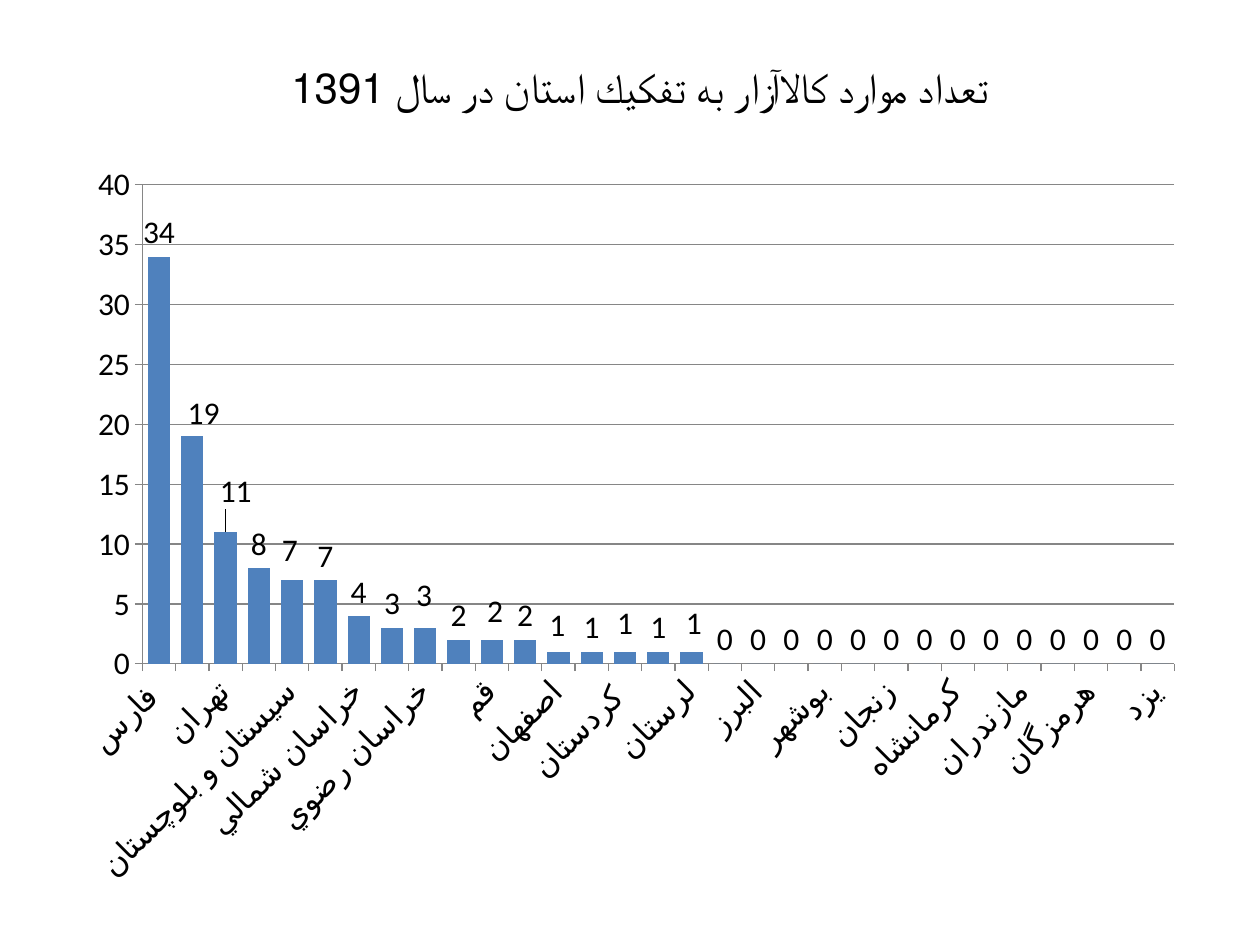
from lxml import etree
from pptx import Presentation
from pptx.chart.data import CategoryChartData
from pptx.dml.color import RGBColor
from pptx.enum.chart import XL_CHART_TYPE, XL_LABEL_POSITION, XL_TICK_MARK
from pptx.enum.text import MSO_ANCHOR, PP_ALIGN
from pptx.oxml.ns import qn
from pptx.util import Inches, Pt

COLORS = {"text": "000000", "bars": "4F81BD", "lines": "868686"}
FONT = "Calibri"

CASES = [
    ("فارس ", 34), ("آذربايجان شرقي ", 19), ("تهران", 11), ("اردبيل", 8),
    ("سيستان و بلوچستان", 7), ("كرمان", 7), ("خراسان شمالي", 4),
    ("چهارمحال و بختياري", 3), ("خراسان رضوي", 3), ("خوزستان", 2), ("قم", 2),
    ("كهگيلوئيه و بوير احمد", 2), ("اصفهان", 1), ("سمنان", 1), ("كردستان ", 1),
    ("گيلان", 1), ("لرستان", 1), ("آذربايجان غربي", 0), ("البرز", 0),
    ("ايلام", 0), ("بوشهر", 0), ("خراسان جنوبي", 0), ("زنجان", 0),
    ("قزوين", 0), ("كرمانشاه", 0), ("گلستان", 0), ("مازندران", 0),
    ("مركزي", 0), ("هرمزگان", 0), ("همدان", 0), ("يزد", 0),
]

# Label shifts by bar, in hundredths of the chart's width and height
LABEL_SHIFTS = {1: (1, 0.2), 2: (0.9, -2.3), 4: (-0.2, -0.8), 8: (-0.1, -1.1),
                10: (0.3, -0.6), 12: (-0.1, -0.3), 14: (0, -0.6), 16: (0.2, -0.6)}


def manual_layout(**settings):
    layout = etree.Element(qn("c:layout"))
    manual = etree.SubElement(layout, qn("c:manualLayout"))
    for tag, value in settings.items():
        etree.SubElement(manual, qn(f"c:{tag}")).set("val", str(value))
    return layout


def style_font(font, size):
    font.name = FONT
    font.size = Pt(size)
    font.bold = False
    font.color.rgb = RGBColor.from_string(COLORS["text"])


prs = Presentation()
prs.slide_width, prs.slide_height = Inches(10), Inches(7.5)
slide = prs.slides.add_slide(prs.slide_layouts[5])

heading = slide.shapes.title
heading.left, heading.top = Inches(0.58), Inches(0.25)
heading.width, heading.height = Inches(9), Inches(0.87)
heading.text_frame.vertical_anchor = MSO_ANCHOR.MIDDLE
heading_line = heading.text_frame.paragraphs[0]
heading_line.alignment = PP_ALIGN.CENTER
heading_line._p.get_or_add_pPr().set("rtl", "1")
heading_run = heading_line.add_run()
heading_run.text = "تعداد موارد كالاآزار به تفكيك استان در سال 1391"
style_font(heading_run.font, 24)

provinces, counts = zip(*CASES)
case_data = CategoryChartData()
case_data.categories = provinces
case_data.add_series("Series 1", counts)
chart = slide.shapes.add_chart(
    XL_CHART_TYPE.COLUMN_CLUSTERED,
    Inches(0.5), Inches(1.17), Inches(9), Inches(5.94), case_data).chart
chart.has_legend = False
chart.has_title = False
style_font(chart.font, 18)

plot_area = chart._chartSpace.chart.plotArea
for automatic in plot_area.findall(qn("c:layout")):
    plot_area.remove(automatic)
plot_area.insert(0, manual_layout(
    layoutTarget="inner", xMode="edge", yMode="edge",
    x=0.07, y=0.05, w=0.91, h=0.64))

plot = chart.plots[0]
plot.gap_width = 49
plot.vary_by_categories = False
bars = plot.series[0]
bars.format.fill.solid()
bars.format.fill.fore_color.rgb = RGBColor.from_string(COLORS["bars"])
bars.data_labels.show_value = True
bars.data_labels.position = XL_LABEL_POSITION.OUTSIDE_END

for bar, (right, down) in LABEL_SHIFTS.items():
    bars.points[bar].data_label.position = XL_LABEL_POSITION.OUTSIDE_END
for label in bars.data_labels._element.findall(qn("c:dLbl")):
    index = label.find(qn("c:idx"))
    right, down = LABEL_SHIFTS[int(index.get("val"))]
    index.addnext(manual_layout(x=right / 100, y=down / 100))

count_axis, province_axis = chart.value_axis, chart.category_axis
count_axis.minimum_scale, count_axis.maximum_scale = 0, 40
count_axis.major_unit = 5
count_axis.has_major_gridlines = True
for line in (count_axis.major_gridlines.format.line,
             count_axis.format.line, province_axis.format.line):
    line.color.rgb = RGBColor.from_string(COLORS["lines"])
    line.width = Pt(0.75)
for axis in (count_axis, province_axis):
    axis.major_tick_mark = XL_TICK_MARK.OUTSIDE
    style_font(axis.tick_labels.font, 18)
slant = province_axis._element.find(qn("c:txPr")).find(qn("a:bodyPr"))
slant.set("rot", str(-45 * 60000))
slant.set("vert", "horz")

prs.save("out.pptx")
